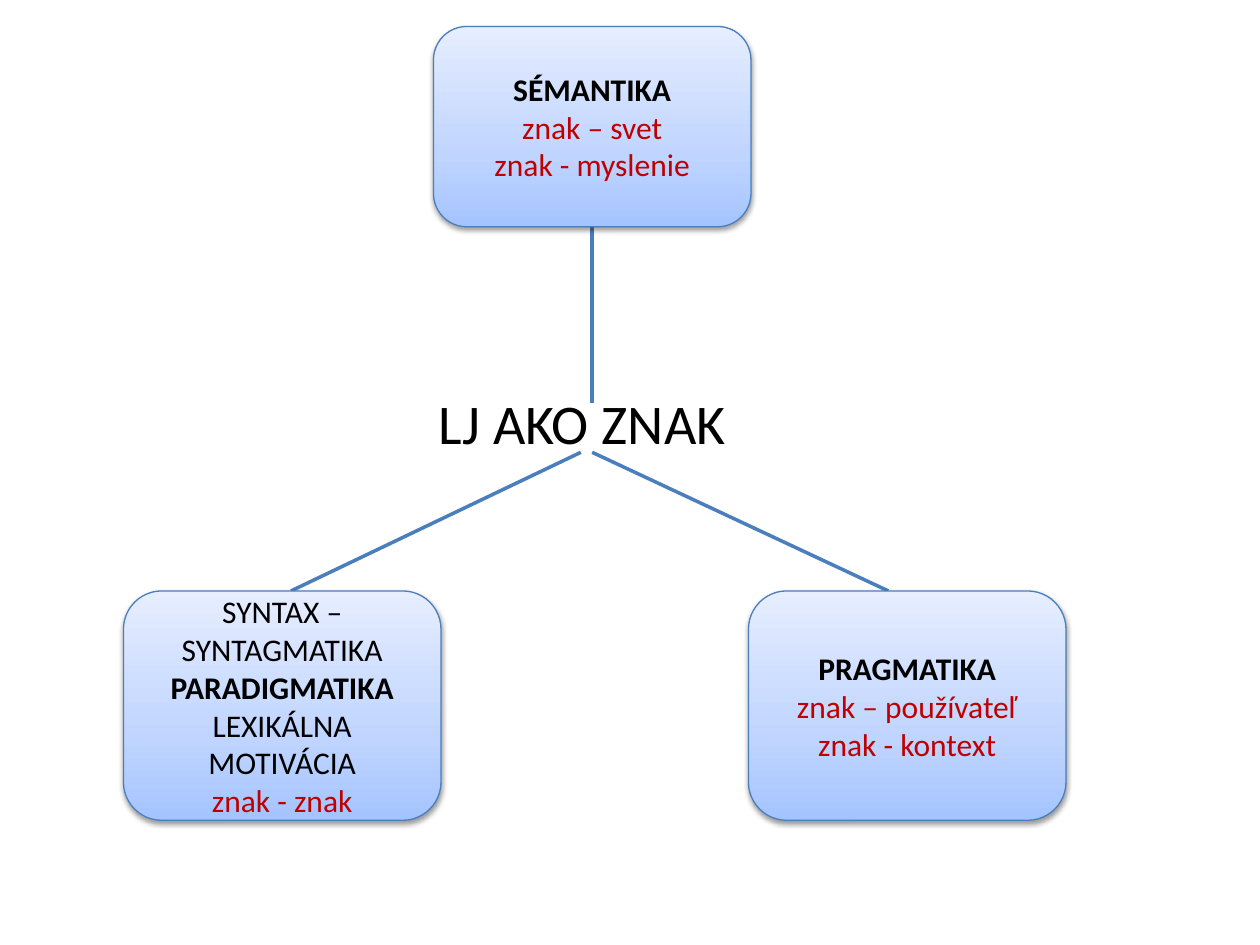
from pptx import Presentation
from pptx.dml.color import RGBColor
from pptx.enum.shapes import MSO_CONNECTOR, MSO_SHAPE
from pptx.enum.text import MSO_ANCHOR, MSO_AUTO_SIZE, PP_ALIGN
from pptx.oxml import parse_xml
from pptx.oxml.ns import nsdecls, qn
from pptx.util import Inches, Pt

BLUE, BLACK, RED = "4B7EBC", "000000", "C00000"
GRADIENT = [(0, "A4C4FF"), (35, "BFD4FF"), (100, "E6EEFF")]
BOX_WIDTH = 2.52


def color(value):
    return RGBColor.from_string(value)


def write(paragraph, text, size=18, ink=BLACK, bold=False, align=PP_ALIGN.CENTER):
    paragraph.alignment = align
    paragraph.space_before = Pt(0)
    span = paragraph.add_run()
    span.text = text
    span.font.name = "Calibri"
    span.font.size = Pt(size)
    span.font.bold = bold
    span.font.color.rgb = color(ink)


def set_gradient(shape):
    shape.fill.gradient()
    gradient = shape.fill._xPr.find(qn("a:gradFill"))
    stops = "".join(
        f'<a:gs pos="{position * 1000}"><a:srgbClr val="{value}"/></a:gs>'
        for position, value in GRADIENT
    )
    gradient.getparent().replace(gradient, parse_xml(
        f'<a:gradFill {nsdecls("a")} rotWithShape="1"><a:gsLst>{stops}</a:gsLst>'
        '<a:lin ang="16200000" scaled="0"/></a:gradFill>'
    ))


def set_shadow(shape):
    shape.shadow.inherit = False
    effects = shape._element.spPr.find(qn("a:effectLst"))
    effects.append(parse_xml(
        f'<a:outerShdw {nsdecls("a")} blurRad="{Pt(3.1)}" dist="{Pt(1.6)}" '
        'dir="5400000" rotWithShape="0">'
        '<a:srgbClr val="000000"><a:alpha val="38000"/></a:srgbClr></a:outerShdw>'
    ))


def add_concept(page, left, top, height, lines):
    box = page.shapes.add_shape(
        MSO_SHAPE.ROUNDED_RECTANGLE,
        Inches(left), Inches(top), Inches(BOX_WIDTH), Inches(height),
    )
    set_gradient(box)
    box.line.color.rgb = color(BLUE)
    box.line.width = Pt(0.75)
    set_shadow(box)
    frame = box.text_frame
    frame.word_wrap = True
    frame.vertical_anchor = MSO_ANCHOR.MIDDLE
    for index, (text, style) in enumerate(lines):
        paragraph = frame.add_paragraph() if index else frame.paragraphs[0]
        write(paragraph, text, **style)


def add_link(page, start, end):
    points = [Inches(value) for value in (*start, *end)]
    link = page.shapes.add_connector(MSO_CONNECTOR.STRAIGHT, *points)
    link.line.color.rgb = color(BLUE)
    link.line.width = Pt(2)
    link._element.spPr.append(parse_xml(f'<a:effectLst {nsdecls("a")}/>'))


def fill_body(body, text):
    body.left, body.top = Inches(0.5), Inches(1.76)
    body.width, body.height = Inches(9), Inches(4.95)
    frame = body.text_frame
    frame.word_wrap = True
    frame.auto_size = MSO_AUTO_SIZE.NONE
    frame.vertical_anchor = MSO_ANCHOR.TOP
    # Insets bring the words to the meeting point of the links
    frame.margin_left, frame.margin_top = Inches(2.98), Inches(1.32)
    paragraph = frame.paragraphs[0]
    properties = paragraph._p.get_or_add_pPr()
    properties.set("marL", "0")
    properties.set("indent", "0")
    properties.append(parse_xml(f'<a:buNone {nsdecls("a")}/>'))
    write(paragraph, text, size=32, align=PP_ALIGN.LEFT)


def main():
    deck = Presentation()
    deck.slide_width, deck.slide_height = Inches(10), Inches(7.5)
    page = deck.slides.add_slide(deck.slide_layouts[1])
    title = page.shapes.title._element
    title.getparent().remove(title)

    # Central term
    fill_body(page.placeholders[1], "LJ AKO ZNAK")

    # Links from the central term to the three concepts
    add_link(page, (4.61, 3.59), (2.31, 4.69))
    add_link(page, (4.7, 3.59), (7.05, 4.69))
    add_link(page, (4.7, 3.2), (4.7, 1.8))

    # Concepts
    plain, strong, relation = {}, {"bold": True}, {"ink": RED}
    add_concept(page, 0.98, 4.69, 1.82, [
        ("SYNTAX – SYNTAGMATIKA", plain),
        ("PARADIGMATIKA", strong),
        ("LEXIKÁLNA MOTIVÁCIA", plain),
        ("znak - znak", relation),
    ])
    add_concept(page, 5.94, 4.69, 1.82, [
        ("PRAGMATIKA", strong),
        ("znak – používateľ", relation),
        ("znak - kontext", relation),
    ])
    add_concept(page, 3.44, 0.21, 1.59, [
        ("SÉMANTIKA", strong),
        ("znak – svet", relation),
        ("znak - myslenie", relation),
    ])
    deck.save("out.pptx")


if __name__ == "__main__":
    main()
